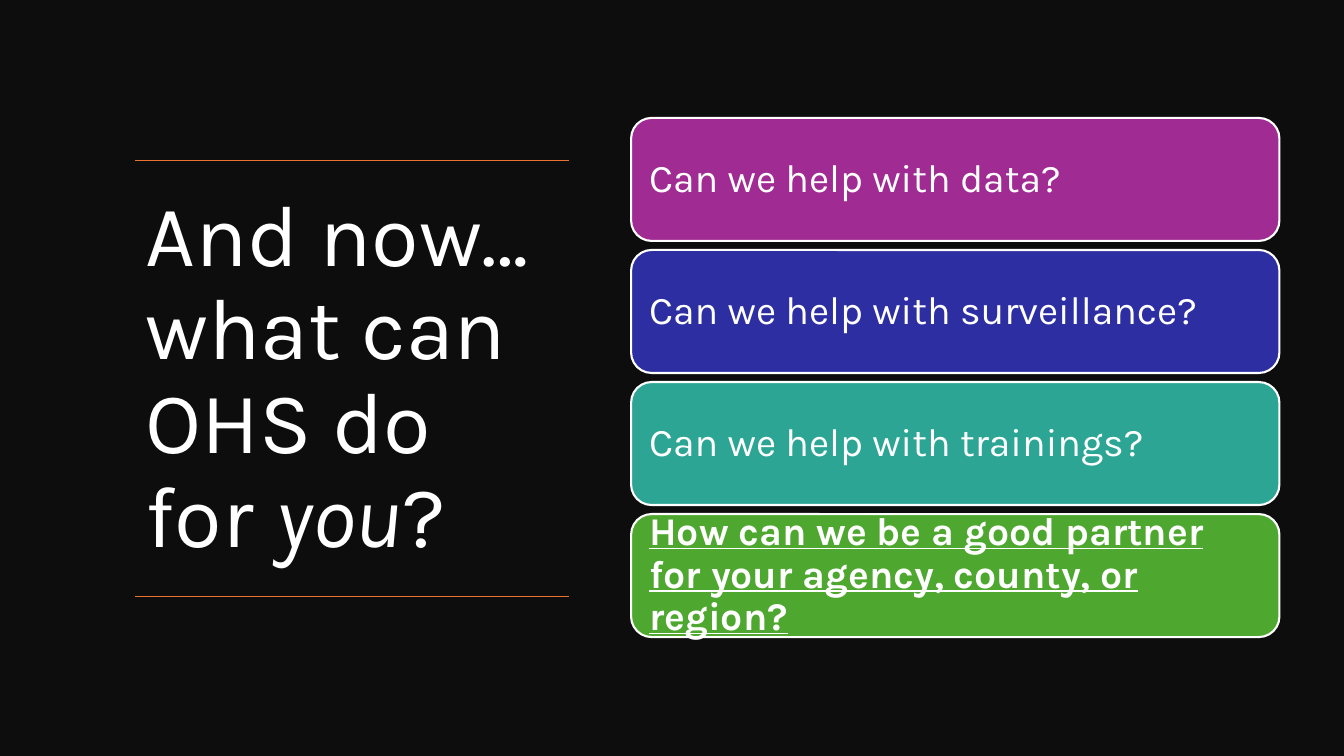
from dataclasses import dataclass

from lxml.etree import SubElement
from pptx import Presentation
from pptx.dml.color import RGBColor
from pptx.enum.shapes import MSO_CONNECTOR, MSO_SHAPE
from pptx.enum.text import MSO_ANCHOR, MSO_AUTO_SIZE, PP_ALIGN
from pptx.oxml.ns import qn
from pptx.slide import Slide
from pptx.text.text import TextFrame, _Paragraph
from pptx.util import Inches, Pt

FONT = "Karla"
WHITE = "FFFFFF"
BLACK = "0D0D0D"
ORANGE = "E97132"
WIDE, HIGH = 13.33, 7.5

# Title block and its rules
LEFT, TOP, SPAN, DEPTH = 1.34, 1.59, 4.3, 4.33

# Column of cards
CARD_X, CARD_Y, CARD_W, CARD_H = 6.26, 1.17, 6.43, 1.22
STEP = 1.31


@dataclass(frozen=True)
class Card:
    text: str
    fill: str
    strong: bool = False


CARDS = [
    Card("Can we help with data?", "A02B93"),
    Card("Can we help with surveillance?", "2C2EA2"),
    Card("Can we help with trainings?", "2DA594"),
    Card("How can we be a good partner for your agency, county, or region?",
         "4EA72E", True),
]


def color(code: str) -> RGBColor:
    return RGBColor.from_string(code)


def set_frame(frame: TextFrame, inset: float) -> None:
    frame.word_wrap = True
    frame.auto_size = MSO_AUTO_SIZE.NONE
    frame.vertical_anchor = MSO_ANCHOR.MIDDLE
    frame.margin_left = frame.margin_right = Inches(inset)


def style(para: _Paragraph, size: float) -> None:
    para.alignment = PP_ALIGN.LEFT
    para.line_spacing = 0.9
    for run in para.runs:
        run.font.name = FONT
        run.font.size = Pt(size)
        run.font.color.rgb = color(WHITE)


def add_back(slide: Slide) -> None:
    back = slide.shapes.add_shape(
        MSO_SHAPE.RECTANGLE, 0, 0, Inches(WIDE), Inches(HIGH))
    back.shadow.inherit = False
    back.fill.solid()
    back.fill.fore_color.rgb = color(BLACK)
    back.line.fill.background()


def add_title(slide: Slide) -> None:
    title = slide.shapes.title
    title.left, title.top = Inches(LEFT), Inches(TOP)
    title.width, title.height = Inches(SPAN), Inches(DEPTH)
    frame = title.text_frame
    set_frame(frame, 0.1)
    frame.margin_right = Inches(0.2)
    para = frame.paragraphs[0]
    para.text = "And now…\vwhat can OHS do for "
    you = para.add_run()
    you.text = "you"
    you.font.italic = True
    para.add_run().text = "?"
    style(para, 62)
    # Bring the title in front of the backdrop
    slide.shapes.element.append(title.element)


def add_rule(slide: Slide, y: float) -> None:
    rule = slide.shapes.add_connector(
        MSO_CONNECTOR.STRAIGHT,
        Inches(LEFT + SPAN), Inches(y), Inches(LEFT), Inches(y))
    rule.line.color.rgb = color(ORANGE)
    rule.line.width = Pt(1)
    SubElement(rule.element.spPr, qn("a:effectLst"))


def add_card(slide: Slide, card: Card, y: float) -> None:
    box = slide.shapes.add_shape(
        MSO_SHAPE.ROUNDED_RECTANGLE,
        Inches(CARD_X), Inches(y), Inches(CARD_W), Inches(CARD_H))
    box.shadow.inherit = False
    box.fill.solid()
    box.fill.fore_color.rgb = color(card.fill)
    box.line.color.rgb = color(WHITE)
    box.line.width = Pt(1.5)
    frame = box.text_frame
    set_frame(frame, 0.12)
    frame.margin_top = frame.margin_bottom = Inches(0.12)
    frame.text = card.text
    para = frame.paragraphs[0]
    style(para, 28)
    if card.strong:
        font = para.runs[0].font
        font.bold = font.underline = True


def main() -> None:
    deck = Presentation()
    deck.slide_width, deck.slide_height = Inches(WIDE), Inches(HIGH)
    slide = deck.slides.add_slide(deck.slide_layouts.get_by_name("Title Only"))

    # Backdrop and title
    add_back(slide)
    add_title(slide)
    for y in (TOP, TOP + DEPTH):
        add_rule(slide, y)

    # Questions
    for row, card in enumerate(CARDS):
        add_card(slide, card, CARD_Y + row * STEP)

    deck.save("out.pptx")


if __name__ == "__main__":
    main()
